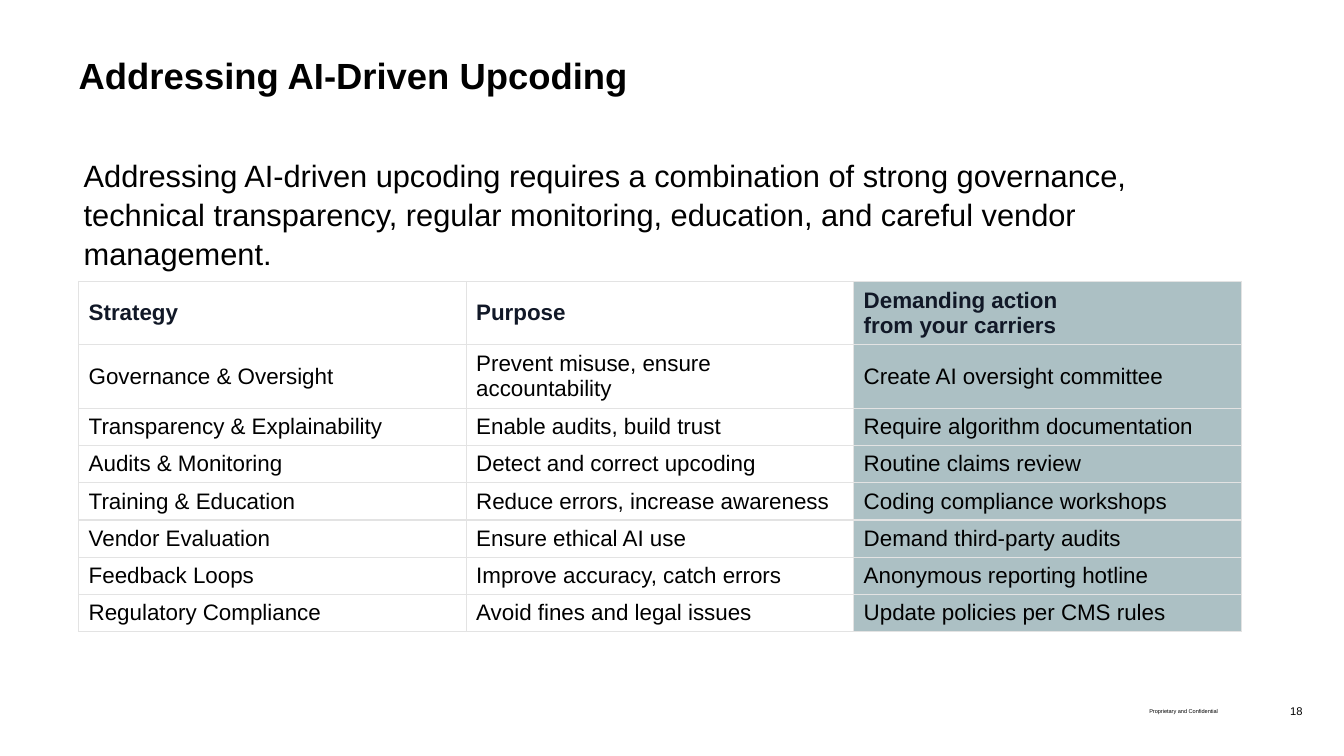
import dataclasses

import lxml.etree
import pptx
import pptx.dml.color
import pptx.enum.text
import pptx.oxml.ns
import pptx.util

SLIDE_WIDTH = pptx.util.Inches(13.33)
SLIDE_HEIGHT = pptx.util.Inches(7.5)
ANCHOR = pptx.enum.text.MSO_ANCHOR
ALIGN = pptx.enum.text.PP_ALIGN


@dataclasses.dataclass(frozen=True)
class Theme:
    font: str = "Arial"
    ink: str = "000000"
    heading_ink: str = "111827"
    paper: str = "FFFFFF"
    highlight: str = "ACC0C4"
    rule: str = "E3E3E3"
    title_size: float = 26
    lead_size: float = 22
    table_size: float = 16
    number_size: float = 8
    notice_size: float = 4
    line_spacing: float = 1.05
    thin_rule: float = 0.75
    row_rule: float = 1


THEME = Theme()

# Lengths in inches, turned into shares of the slide
LEFT = 0.78 / 13.33
TABLE_WIDTH = 11.53 / 13.33
SINGLE_ROW, DOUBLE_ROW = 0.37 / 7.5, 0.63 / 7.5

STRATEGIES = [
    ("Strategy", "Purpose", "Demanding action\nfrom your carriers"),
    ("Governance & Oversight", "Prevent misuse, ensure accountability",
     "Create AI oversight committee"),
    ("Transparency & Explainability", "Enable audits, build trust",
     "Require algorithm documentation"),
    ("Audits & Monitoring", "Detect and correct upcoding", "Routine claims review"),
    ("Training & Education", "Reduce errors, increase awareness",
     "Coding compliance workshops"),
    ("Vendor Evaluation", "Ensure ethical AI use", "Demand third-party audits"),
    ("Feedback Loops", "Improve accuracy, catch errors", "Anonymous reporting hotline"),
    ("Regulatory Compliance", "Avoid fines and legal issues",
     "Update policies per CMS rules"),
]


def across(share):
    return round(SLIDE_WIDTH * share)


def down(share):
    return round(SLIDE_HEIGHT * share)


def frame(left, top, width, height):
    return across(left), down(top), across(width), down(height)


def rgb(colour):
    return pptx.dml.color.RGBColor.from_string(colour)


def write(paragraph, text, size, colour=THEME.ink, bold=False):
    for index, line in enumerate(text.split("\n")):
        if index:
            paragraph.add_line_break()
        run = paragraph.add_run()
        run.text = line
        run.font.name = THEME.font
        run.font.size = pptx.util.Pt(size)
        run.font.bold = bold
        run.font.color.rgb = rgb(colour)


def set_insets(text_frame, side, end):
    text_frame.margin_left = text_frame.margin_right = pptx.util.Inches(side)
    text_frame.margin_top = text_frame.margin_bottom = pptx.util.Inches(end)


def fill_placeholder(placeholder, place, text, size, insets=(0, 0), bold=False):
    placeholder.left, placeholder.top, placeholder.width, placeholder.height = place
    text_frame = placeholder.text_frame
    text_frame.word_wrap = True
    text_frame.auto_size = pptx.enum.text.MSO_AUTO_SIZE.NONE
    text_frame.vertical_anchor = ANCHOR.TOP
    set_insets(text_frame, *insets)
    paragraph = text_frame.paragraphs[0]
    properties = paragraph._p.get_or_add_pPr()
    properties.set("marL", "0")
    properties.set("indent", "0")
    lxml.etree.SubElement(properties, pptx.oxml.ns.qn("a:buNone"))
    paragraph.alignment = ALIGN.LEFT
    paragraph.space_before = pptx.util.Pt(0)
    paragraph.line_spacing = THEME.line_spacing
    write(paragraph, text, size, bold=bold)


def add_footer_text(slide, place, text, size):
    text_frame = slide.shapes.add_textbox(*place).text_frame
    text_frame.word_wrap = True
    text_frame.vertical_anchor = ANCHOR.MIDDLE
    set_insets(text_frame, 0, 0)
    paragraph = text_frame.paragraphs[0]
    paragraph.alignment = ALIGN.RIGHT
    write(paragraph, text, size)


def set_borders(cell, top, bottom):
    properties = cell._tc.get_or_add_tcPr()
    widths = {"lnL": THEME.thin_rule, "lnR": THEME.thin_rule, "lnT": top, "lnB": bottom}
    for side, width in widths.items():
        line = lxml.etree.SubElement(properties, pptx.oxml.ns.qn(f"a:{side}"),
                                     w=str(pptx.util.Pt(width)))
        solid = lxml.etree.SubElement(line, pptx.oxml.ns.qn("a:solidFill"))
        lxml.etree.SubElement(solid, pptx.oxml.ns.qn("a:srgbClr"), val=THEME.rule)


def add_strategy_table(slide, left, top, width):
    heights = [DOUBLE_ROW] * 2 + [SINGLE_ROW] * (len(STRATEGIES) - 2)
    last_row, last_column = len(STRATEGIES) - 1, len(STRATEGIES[0]) - 1
    place = frame(left, top, width, sum(heights))
    table = slide.shapes.add_table(last_row + 1, last_column + 1, *place).table
    table.horz_banding = False
    for column in table.columns:
        column.width = across(width / (last_column + 1))
    for r, (entries, height) in enumerate(zip(STRATEGIES, heights)):
        table.rows[r].height = down(height)
        for c, entry in enumerate(entries):
            cell = table.cell(r, c)
            cell.vertical_anchor = ANCHOR.MIDDLE
            # Borders come before the fill in the cell properties
            set_borders(cell,
                        THEME.row_rule if r else THEME.thin_rule,
                        THEME.row_rule if r < last_row else THEME.thin_rule)
            cell.fill.solid()
            cell.fill.fore_color.rgb = rgb(
                THEME.highlight if c == last_column else THEME.paper)
            write(cell.text_frame.paragraphs[0], entry, THEME.table_size,
                  THEME.ink if r else THEME.heading_ink, bold=r == 0)


def main():
    deck = pptx.Presentation()
    deck.slide_width, deck.slide_height = SLIDE_WIDTH, SLIDE_HEIGHT
    slide = deck.slides.add_slide(deck.slide_layouts[1])
    slide.background.fill.solid()
    slide.background.fill.fore_color.rgb = rgb(THEME.paper)

    # Title and lead sentence
    fill_placeholder(slide.shapes.title, frame(LEFT, 0.51 / 7.5, 12.14 / 13.33, 0.44 / 7.5),
                     "Addressing AI-Driven Upcoding", THEME.title_size, bold=True)
    fill_placeholder(slide.placeholders[1],
                     frame(LEFT, 1.51 / 7.5, 11.72 / 13.33, 1.53 / 7.5),
                     "Addressing AI-driven upcoding requires a combination of strong "
                     "governance, technical transparency, regular monitoring, education, "
                     "and careful vendor management.",
                     THEME.lead_size, insets=(0.05, 0.03))

    # Strategies
    add_strategy_table(slide, LEFT, 2.79 / 7.5, TABLE_WIDTH)

    # Footer
    add_footer_text(slide, frame(12.48 / 13.33, 6.85 / 7.5, 0.44 / 13.33, 0.4 / 7.5),
                    "18", THEME.number_size)
    add_footer_text(slide, frame(6.57 / 13.33, 6.86 / 7.5, 5.51 / 13.33, 0.4 / 7.5),
                    "Proprietary and Confidential", THEME.notice_size)

    deck.save("out.pptx")


if __name__ == "__main__":
    main()
